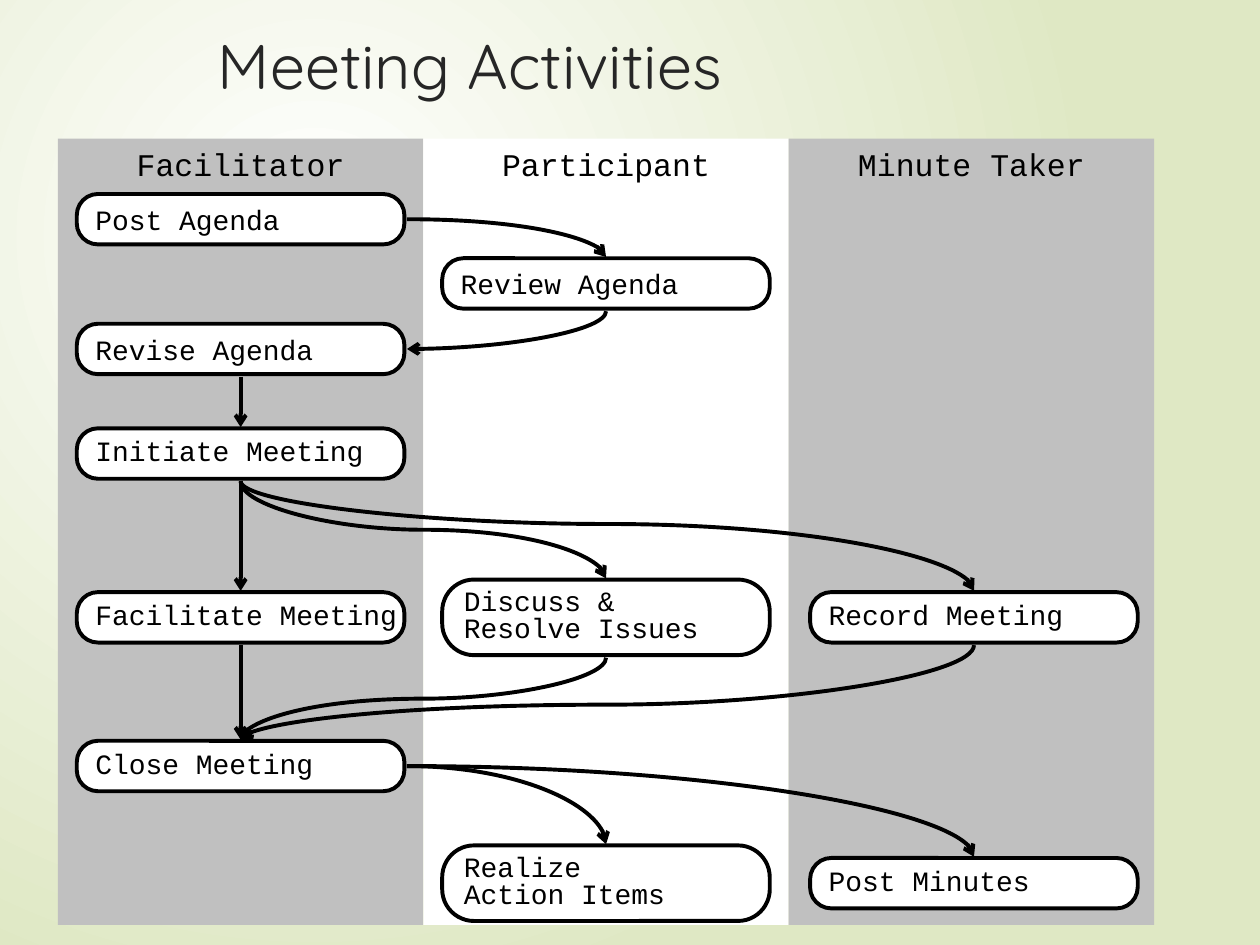
from lxml import etree
from pptx import Presentation
from pptx.dml.color import RGBColor
from pptx.enum.shapes import MSO_CONNECTOR, MSO_SHAPE
from pptx.enum.text import MSO_ANCHOR, PP_ALIGN
from pptx.oxml.ns import qn
from pptx.util import Inches, Pt

RECTANGLE, ROUNDED = MSO_SHAPE.RECTANGLE, MSO_SHAPE.ROUNDED_RECTANGLE
STRAIGHT, CURVE = MSO_CONNECTOR.STRAIGHT, MSO_CONNECTOR.CURVE
TOP, MIDDLE = MSO_ANCHOR.TOP, MSO_ANCHOR.MIDDLE
LEFT, CENTER = PP_ALIGN.LEFT, PP_ALIGN.CENTER

COLORS = {"ink": "000000", "title": "262626", "white": "FFFFFF",
          "lane": "C0C0C0", "backdrop": "DFE8C4"}
LINE_WIDTH = Pt(2.25)
LANE_LEFT, LANE_TOP, LANE_WIDTH, LANE_HEIGHT = 0.46, 1.1, 2.9, 6.24
LANES = [("Facilitator", "lane"), ("Participant", "white"), ("Minute Taker", "lane")]
STEP_LEFTS = (0.61, 3.51, 6.43)
STEP_WIDTH = 2.6

# key: (text, lane, vertical centre, height, line spacing)
STEPS = {
    "post": ("Post Agenda", 0, 1.74, 0.4, None),
    "review": ("Review Agenda", 1, 2.25, 0.4, None),
    "revise": ("Revise Agenda", 0, 2.77, 0.4, None),
    "initiate": ("Initiate Meeting", 0, 3.6, 0.4, 0.8),
    "facilitate": ("Facilitate Meeting", 0, 4.9, 0.4, 0.8),
    "discuss": ("Discuss &\vResolve Issues", 1, 4.9, 0.6, 0.8),
    "record": ("Record Meeting", 2, 4.9, 0.4, 0.8),
    "close": ("Close Meeting", 0, 6.08, 0.4, 0.8),
    "realize": ("Realize\nAction Items", 1, 7.01, 0.6, 0.8),
    "minutes": ("Post Minutes", 2, 7.01, 0.4, 0.8),
}

# (from step, side, to step, side, place of the bend)
FLOWS = [
    ("post", "right", "review", "top", None),
    ("review", "bottom", "revise", "right", None),
    ("revise", "bottom", "initiate", "top", None),
    ("initiate", "bottom", "facilitate", "top", None),
    ("initiate", "bottom", "discuss", "top", 0.5),
    ("initiate", "bottom", "record", "top", 0.39),
    ("facilitate", "bottom", "close", "top", None),
    ("discuss", "bottom", "close", "top", 0.5),
    ("record", "bottom", "close", "top", 0.63),
    ("close", "right", "realize", "top", None),
    ("close", "right", "minutes", "top", None),
]


def rgb(name):
    return RGBColor.from_string(COLORS[name])


def write_text(shape, text, *, font="Courier New", size=16, color="ink",
               align=LEFT, anchor=MIDDLE, spacing=None, wrap=False):
    frame = shape.text_frame
    frame.text = text
    frame.word_wrap = wrap
    frame.vertical_anchor = anchor
    for paragraph in frame.paragraphs:
        paragraph.alignment = align
        paragraph.line_spacing = spacing
        for run in paragraph.runs:
            run.font.name = font
            run.font.size = Pt(size)
            run.font.color.rgb = rgb(color)


def paint_background(slide):
    """Radial gradient centred in the upper left quarter."""
    fill = slide.background.fill
    fill.gradient()
    for stop, color in zip(fill.gradient_stops, ("white", "backdrop")):
        stop.color.rgb = rgb(color)
    linear = next(slide.background._cSld.iter(qn("a:lin")))
    radial = etree.Element(qn("a:path"), path="circle")
    etree.SubElement(radial, qn("a:fillToRect"),
                     l="50000", t="50000", r="100000", b="100000")
    linear.getparent().replace(linear, radial)


def add_title(slide, text):
    title = slide.shapes.title
    title.left, title.top = Inches(1.63), Inches(0.16)
    title.width, title.height = Inches(7.21), Inches(1.4)
    write_text(title, text, font="Quicksand", size=36, color="title",
               anchor=TOP, wrap=True)


def add_box(slide, kind, left, top, width, height, color):
    box = slide.shapes.add_shape(kind, Inches(left), Inches(top),
                                 Inches(width), Inches(height))
    box.shadow.inherit = False
    box.fill.solid()
    box.fill.fore_color.rgb = rgb(color)
    return box


def add_lane(slide, index, heading, color):
    lane = add_box(slide, RECTANGLE, LANE_LEFT + index * LANE_WIDTH, LANE_TOP,
                   LANE_WIDTH, LANE_HEIGHT, color)
    lane.line.fill.background()
    write_text(lane, heading, size=18, align=CENTER, anchor=TOP)


def add_step(slide, text, lane, middle, height, spacing):
    step = add_box(slide, ROUNDED, STEP_LEFTS[lane], middle - height / 2,
                   STEP_WIDTH, height, "white")
    step.adjustments[0] = 0.42
    step.line.color.rgb = rgb("ink")
    step.line.width = LINE_WIDTH
    write_text(step, text, spacing=spacing, wrap="\n" in text)


def anchor_point(key, side):
    """Where an arrow meets a step, just outside its outline."""
    _, lane, middle, height, _ = STEPS[key]
    left = STEP_LEFTS[lane]
    return {
        "right": (left + STEP_WIDTH + 0.02, middle),
        "top": (left + STEP_WIDTH / 2, middle - height / 2 - 0.01),
        "bottom": (left + STEP_WIDTH / 2, middle + height / 2 + 0.02),
    }[side]


def add_arrow(slide, kind, start, end):
    arrow = slide.shapes.add_connector(kind, *map(Inches, start + end))
    arrow.line.color.rgb = rgb("ink")
    arrow.line.width = LINE_WIDTH
    properties = arrow._element.spPr
    etree.SubElement(properties.find(qn("a:ln")), qn("a:tailEnd"), type="arrow")
    etree.SubElement(properties, qn("a:effectLst"))
    return arrow


def add_curved_arrow(slide, start, end, downward, bend):
    """Curve that leaves downward or sideways; a bend makes it S-shaped."""
    (x1, y1), (x2, y2) = start, end
    if downward:  # the unrotated frame swaps width and height about its centre
        center_x, center_y = (x1 + x2) / 2, (y1 + y2) / 2
        half_width, half_height = abs(y2 - y1) / 2, abs(x2 - x1) / 2
        start = (center_x - half_width, center_y - half_height)
        end = (center_x + half_width, center_y + half_height)
    arrow = add_arrow(slide, CURVE, start, end)
    properties = arrow._element.spPr
    if downward:
        transform = properties.find(qn("a:xfrm"))
        transform.set("rot", str((270 if x2 > x1 else 90) * 60000))
        if x2 > x1:
            transform.set("flipH", "1")
    geometry = properties.find(qn("a:prstGeom"))
    if bend is None:
        geometry.set("prst", "curvedConnector2")
    else:
        etree.SubElement(geometry.find(qn("a:avLst")), qn("a:gd"),
                         name="adj1", fmla=f"val {round(bend * 100000)}")


def add_flow(slide, source, source_side, target, target_side, bend):
    start = anchor_point(source, source_side)
    end = anchor_point(target, target_side)
    if start[0] == end[0]:
        add_arrow(slide, STRAIGHT, start, end)
    else:
        add_curved_arrow(slide, start, end, source_side == "bottom", bend)


def main():
    deck = Presentation()
    deck.slide_width, deck.slide_height = Inches(10), Inches(7.5)
    slide = deck.slides.add_slide(deck.slide_layouts[5])
    paint_background(slide)
    add_title(slide, "Meeting Activities")
    for index, (heading, color) in enumerate(LANES):
        add_lane(slide, index, heading, color)
    for step in STEPS.values():
        add_step(slide, *step)
    for flow in FLOWS:
        add_flow(slide, *flow)
    deck.save("out.pptx")


if __name__ == "__main__":
    main()
